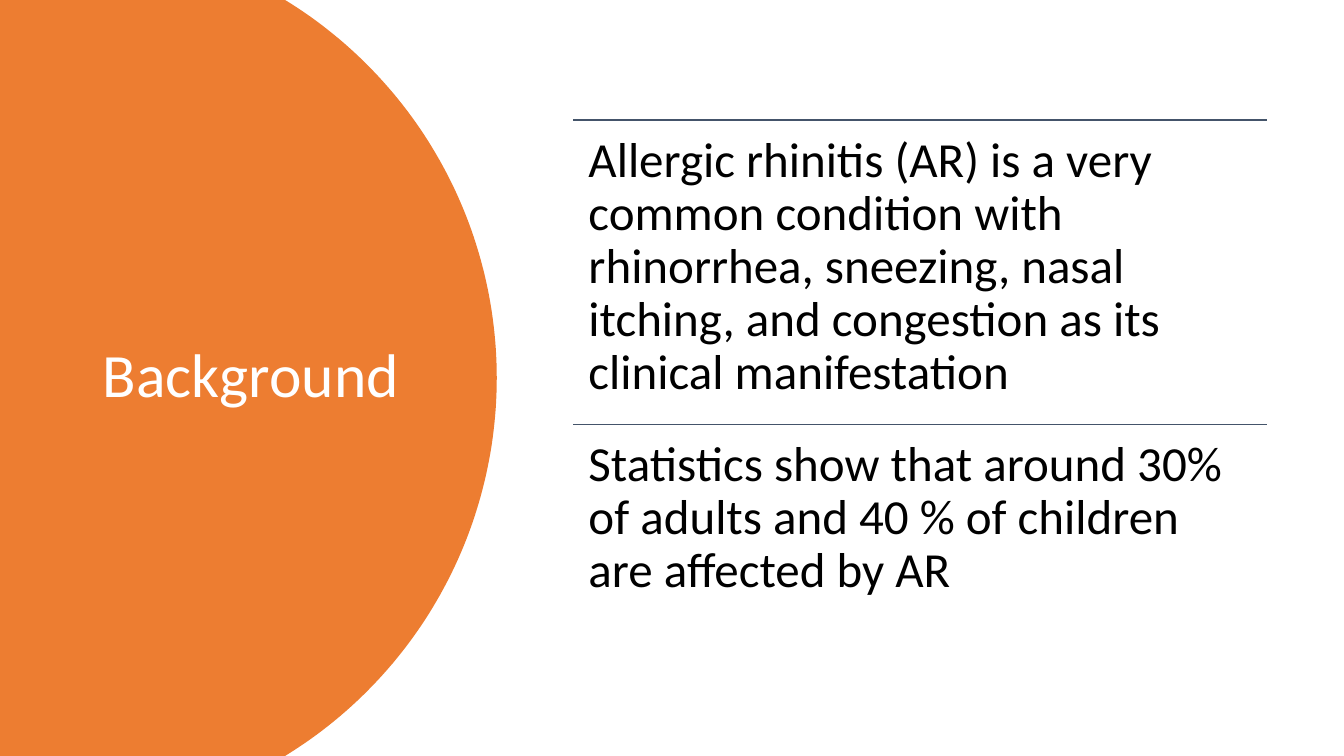
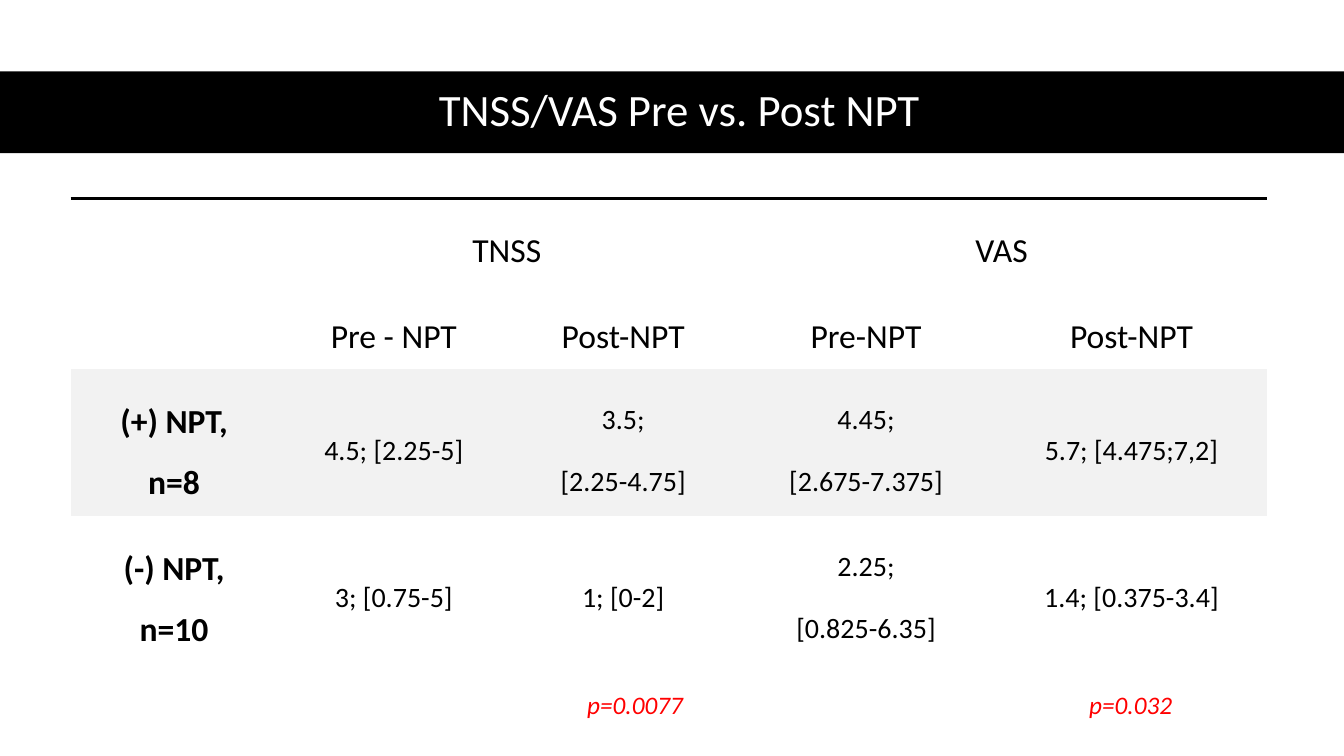
"""Build two slides on allergic rhinitis: the background and the TNSS/VAS results."""
from math import asin, cos, sin

from lxml.etree import SubElement
from pptx import Presentation
from pptx.dml.color import RGBColor
from pptx.enum.shapes import MSO_CONNECTOR, MSO_SHAPE
from pptx.enum.text import MSO_ANCHOR, MSO_AUTO_SIZE, PP_ALIGN
from pptx.oxml import parse_xml
from pptx.oxml.ns import nsdecls, qn
from pptx.util import Cm, Pt

COLORS = {"accent": "ED7D31", "rule": "44546A", "text": "000000", "band": "000000",
          "title": "FFFFFF", "stripe": "F2F2F2", "p_value": "FF0000"}
FONT = "Calibri"
NO_STYLE_NO_GRID = "{2D5ABB26-0587-4C30-8999-92F81FD0307C}"


def write(frame, text, size, color, align=PP_ALIGN.LEFT, spacing=1.0, after=0,
          bold=False, italic=False):
    frame.text = text
    for paragraph in frame.paragraphs:
        paragraph.alignment = align
        paragraph.line_spacing = spacing
        paragraph.space_before = Pt(0)
        paragraph.space_after = Pt(after)
        for run in paragraph.runs:
            run.font.name, run.font.size = FONT, Pt(size)
            run.font.bold, run.font.italic = bold, italic
            run.font.color.rgb = RGBColor.from_string(COLORS[color])


def add_title(slide, text, box, size, align, backdrop, backdrop_color):
    backdrop.shadow.inherit = False
    backdrop.fill.solid()
    backdrop.fill.fore_color.rgb = RGBColor.from_string(COLORS[backdrop_color])
    backdrop.line.fill.background()
    slide.shapes._spTree.insert(2, backdrop._element)
    title = slide.shapes.title
    title.left, title.top, title.width, title.height = map(Cm, box)
    title.text_frame.vertical_anchor = MSO_ANCHOR.MIDDLE
    title.text_frame.auto_size = MSO_AUTO_SIZE.NONE
    write(title.text_frame, text, size, "title", align, spacing=0.9)


prs = Presentation()
prs.slide_width, prs.slide_height = Cm(33.87), Cm(19.05)

background = prs.slides.add_slide(prs.slide_layouts[3])
radius, center_x, center_y = 11.17, 1.35, 9.525
half_angle, steps = asin(center_y / radius), 120
angles = [half_angle * (2 * step / steps - 1) for step in range(steps + 1)]
arc = [(Cm(center_x + radius * cos(angle)), Cm(center_y + radius * sin(angle)))
       for angle in angles]
outline = background.shapes.build_freeform(0, 0)
outline.add_line_segments(arc + [(0, prs.slide_height)], close=True)
add_title(background, "Background", (2.34, 1.78, 8.2, 15.47), 44, PP_ALIGN.LEFT,
          outline.convert_to_shape(), "accent")

facts = [
    "Allergic rhinitis (AR) is a very common condition with rhinorrhea, sneezing, "
    "nasal itching, and congestion as its clinical manifestation",
    "Statistics show that around 30% of adults and 40 % of children are affected by AR",
]
fact_left, fact_top, fact_width, fact_height = Cm(14.45), Cm(3.02), Cm(17.48), Cm(7.67)
for index, fact in enumerate(facts):
    top = fact_top + index * fact_height
    rule = background.shapes.add_connector(
        MSO_CONNECTOR.STRAIGHT, fact_left, top, fact_left + fact_width, top)
    rule.line.color.rgb = RGBColor.from_string(COLORS["rule"])
    rule.line.width = Pt(1)
    SubElement(rule._element.spPr, qn("a:effectLst"))

    body = background.placeholders[index + 1]
    body.left, body.top, body.width, body.height = fact_left, top, fact_width, fact_height
    frame = body.text_frame
    frame.margin_left = frame.margin_right = frame.margin_top = frame.margin_bottom = Cm(0.38)
    frame.vertical_anchor = MSO_ANCHOR.TOP
    frame.auto_size = MSO_AUTO_SIZE.NONE
    write(frame, fact, 35, "text", spacing=0.9, after=12)
    properties = frame.paragraphs[0]._p.get_or_add_pPr()
    properties.set("marL", "0")
    properties.set("indent", "0")
    SubElement(properties, qn("a:buNone"))

results = prs.slides.add_slide(prs.slide_layouts[5])
band = results.shapes.add_shape(MSO_SHAPE.RECTANGLE, 0, Cm(1.8), prs.slide_width, Cm(2.06))
add_title(results, "TNSS/VAS Pre vs. Post NPT", (1.55, 1.78, 31.14, 2.06), 32,
          PP_ALIGN.CENTER, band, "band")

scores = [
    ["", "TNSS", "", "VAS", ""],
    ["", "Pre - NPT", "Post-NPT", "Pre-NPT", "Post-NPT"],
    ["(+) NPT, n=8", "4.5; [2.25-5]", "3.5;\n[2.25-4.75]", "4.45;\n[2.675-7.375]",
     "5.7; [4.475;7,2]"],
    ["(-) NPT, n=10", "3; [0.75-5]", "1; [0-2]", "2.25;\n[0.825-6.35]",
     "1.4; [0.375-3.4]"],
]
column_widths = [5.21, 5.87, 5.69, 6.55, 6.83]
row_heights = [2.13, 2.13, 3.63, 3.63]
table = results.shapes.add_table(
    len(scores), len(column_widths), Cm(1.78), Cm(5),
    Cm(sum(column_widths)), Cm(sum(row_heights))).table
table.first_row = table.horz_banding = False
table._tbl.tblPr.find(qn("a:tableStyleId")).text = NO_STYLE_NO_GRID
for column, width in zip(table.columns, column_widths):
    column.width = Cm(width)
for row, height in zip(table.rows, row_heights):
    row.height = Cm(height)
for first in (1, 3):
    table.cell(0, first).merge(table.cell(0, first + 1))

for r, values in enumerate(scores):
    for c, value in enumerate(values):
        cell = table.cell(r, c)
        cell.margin_left = cell.margin_right = Cm(0.79)
        cell.margin_top = cell.margin_bottom = Cm(0.3)
        cell.vertical_anchor = MSO_ANCHOR.MIDDLE
        if r == 2:
            cell.fill.solid()
            cell.fill.fore_color.rgb = RGBColor.from_string(COLORS["stripe"])
        else:
            cell.fill.background()
        if r == 0:
            cell._tc.get_or_add_tcPr().insert(0, parse_xml(
                f'<a:lnT {nsdecls("a")} w="{Pt(2.25)}"><a:solidFill>'
                f'<a:srgbClr val="{COLORS["text"]}"/></a:solidFill></a:lnT>'))
        if value:
            write(cell.text_frame, value, 24 if r < 2 or c == 0 else 20, "text",
                  PP_ALIGN.CENTER, spacing=1.5, after=8, bold=r > 1 and c == 0)

for left, p_value in [(14.55, "p=0.0077"), (27.2, "p=0.032")]:
    label = results.shapes.add_textbox(Cm(left), Cm(17.25), Cm(3.23), Cm(1.02))
    label.text_frame.word_wrap = True
    label.text_frame.auto_size = MSO_AUTO_SIZE.SHAPE_TO_FIT_TEXT
    write(label.text_frame, p_value, 18, "p_value", italic=True)

prs.save("out.pptx")
